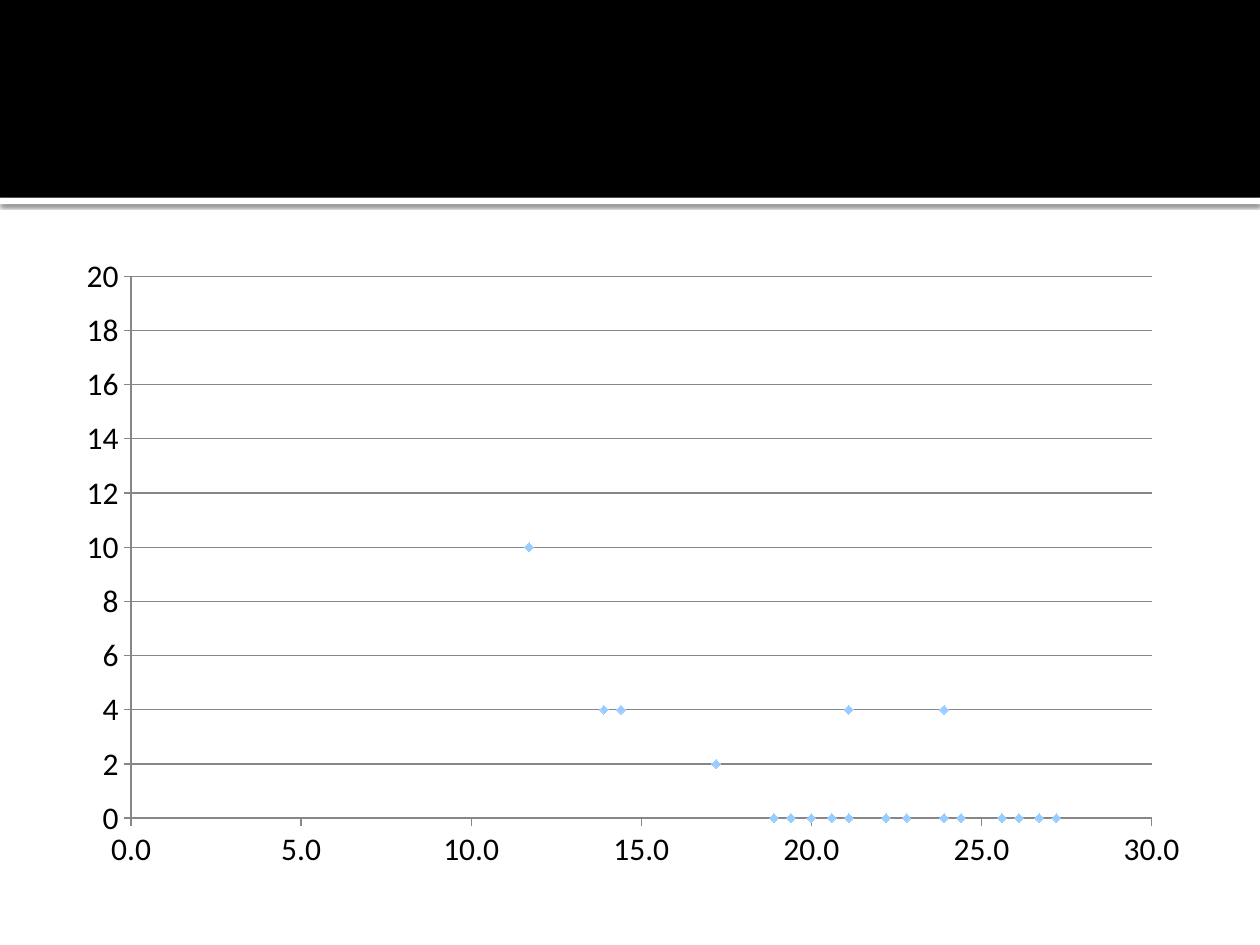
from dataclasses import dataclass

from lxml.etree import SubElement
from pptx import Presentation
from pptx.chart.data import XyChartData
from pptx.dml.color import RGBColor
from pptx.enum.chart import XL_CHART_TYPE as ChartType
from pptx.enum.chart import XL_MARKER_STYLE as MarkerStyle
from pptx.enum.chart import XL_TICK_MARK as TickMark
from pptx.enum.shapes import MSO_SHAPE as ShapeType
from pptx.oxml import parse_xml
from pptx.oxml.ns import nsdecls, qn
from pptx.util import Inches, Pt


@dataclass(frozen=True)
class Theme:
    font: str = "Calibri"
    chart_size: int = 18
    marker_size: int = 5
    black: str = "000000"
    white: str = "FFFFFF"
    grid: str = "878787"
    marker: str = "99CCFF"


POINTS = [
    (18.9, 0), (21.1, 4), (20.6, 0), (26.7, 0), (20, 0), (19.4, 0),
    (22.2, 0), (22.8, 0), (21.1, 0), (13.9, 4), (17.2, 2), (25.6, 0),
    (21.1, 4), (19.4, 0), (11.7, 10), (23.9, 0), (19.4, 0), (21.1, 0),
    (27.2, 0), (24.4, 0), (26.1, 0), (23.9, 4), (24.4, 0), (14.4, 4),
]


class SlideBuilder:
    def __init__(self, slide, theme):
        self.slide = slide
        self.theme = theme

    def band(self, top, height, color, shadow=False):
        """Draw a full-width bar, with an optional soft shadow below it."""
        shape = self.slide.shapes.add_shape(
            ShapeType.RECTANGLE, 0, Inches(top), Inches(10), Inches(height))
        shape.shadow.inherit = False
        shape.fill.solid()
        shape.fill.fore_color.rgb = RGBColor.from_string(color)
        shape.line.fill.background()
        if shadow:
            effects = shape._element.spPr.find(qn("a:effectLst"))
            effects.append(parse_xml(
                f'<a:outerShdw {nsdecls("a")} blurRad="{Pt(2.5)}" '
                f'dist="{Pt(0.8)}" dir="5400000" algn="t" rotWithShape="0">'
                f'<a:srgbClr val="{self.theme.black}"><a:alpha val="60000"/>'
                '</a:srgbClr></a:outerShdw>'))

    def scatter(self, left, top, width, height, points):
        data = XyChartData()
        series_data = data.add_series("Series 1")
        for x, y in points:
            series_data.add_data_point(x, y)
        chart = self.slide.shapes.add_chart(
            ChartType.XY_SCATTER, Inches(left), Inches(top),
            Inches(width), Inches(height), data).chart
        chart.has_title = False
        chart.has_legend = False
        chart.font.name = self.theme.font
        chart.font.size = Pt(self.theme.chart_size)
        chart.font.color.rgb = RGBColor.from_string(self.theme.black)

        plot = chart.plots[0]
        plot.vary_by_categories = False
        series = plot.series[0]
        series.smooth = False
        series.format.line.fill.background()
        series.marker.style = MarkerStyle.DIAMOND
        series.marker.size = self.theme.marker_size
        marker = series.marker.format
        marker.fill.solid()
        marker.fill.fore_color.rgb = RGBColor.from_string(self.theme.marker)
        marker.line.fill.background()

        self.axis(chart.category_axis, 30, 5, "0.0")
        self.axis(chart.value_axis, 20, 2, "0", gridlines=True)
        self.plot_area(chart, x=0.06, y=0.05, w=0.9, h=0.85)

    def axis(self, axis, maximum, unit, number_format, gridlines=False):
        axis.minimum_scale = 0
        axis.maximum_scale = maximum
        axis.major_unit = unit
        axis.major_tick_mark = TickMark.OUTSIDE
        axis.minor_tick_mark = TickMark.NONE
        axis.tick_labels.number_format = number_format
        axis.tick_labels.number_format_is_linked = False
        axis.has_major_gridlines = gridlines
        lines = [axis.format.line]
        if gridlines:
            lines.append(axis.major_gridlines.format.line)
        for line in lines:
            line.color.rgb = RGBColor.from_string(self.theme.grid)
            line.width = Pt(0.75)

    def plot_area(self, chart, **fractions):
        """Fix the inner plot area as fractions of the chart frame."""
        area = chart._chartSpace.chart.plotArea
        layout = area.find(qn("c:layout"))
        if layout is None:
            layout = parse_xml(f'<c:layout {nsdecls("c")}/>')
            area.insert(0, layout)
        manual = SubElement(layout, qn("c:manualLayout"))
        settings = {"layoutTarget": "inner", "xMode": "edge",
                    "yMode": "edge", **fractions}
        for name, value in settings.items():
            SubElement(manual, qn(f"c:{name}")).set("val", str(value))


def main():
    presentation = Presentation()
    presentation.slide_width = Inches(10)
    presentation.slide_height = Inches(7.5)
    theme = Theme()
    slide = presentation.slides.add_slide(presentation.slide_layouts[6])
    builder = SlideBuilder(slide, theme)
    builder.band(1.57, 0.05, theme.white, shadow=True)
    builder.band(0, 1.57, theme.black)
    builder.scatter(0.5, 1.94, 9, 5.06, POINTS)
    presentation.save("out.pptx")


if __name__ == "__main__":
    main()
